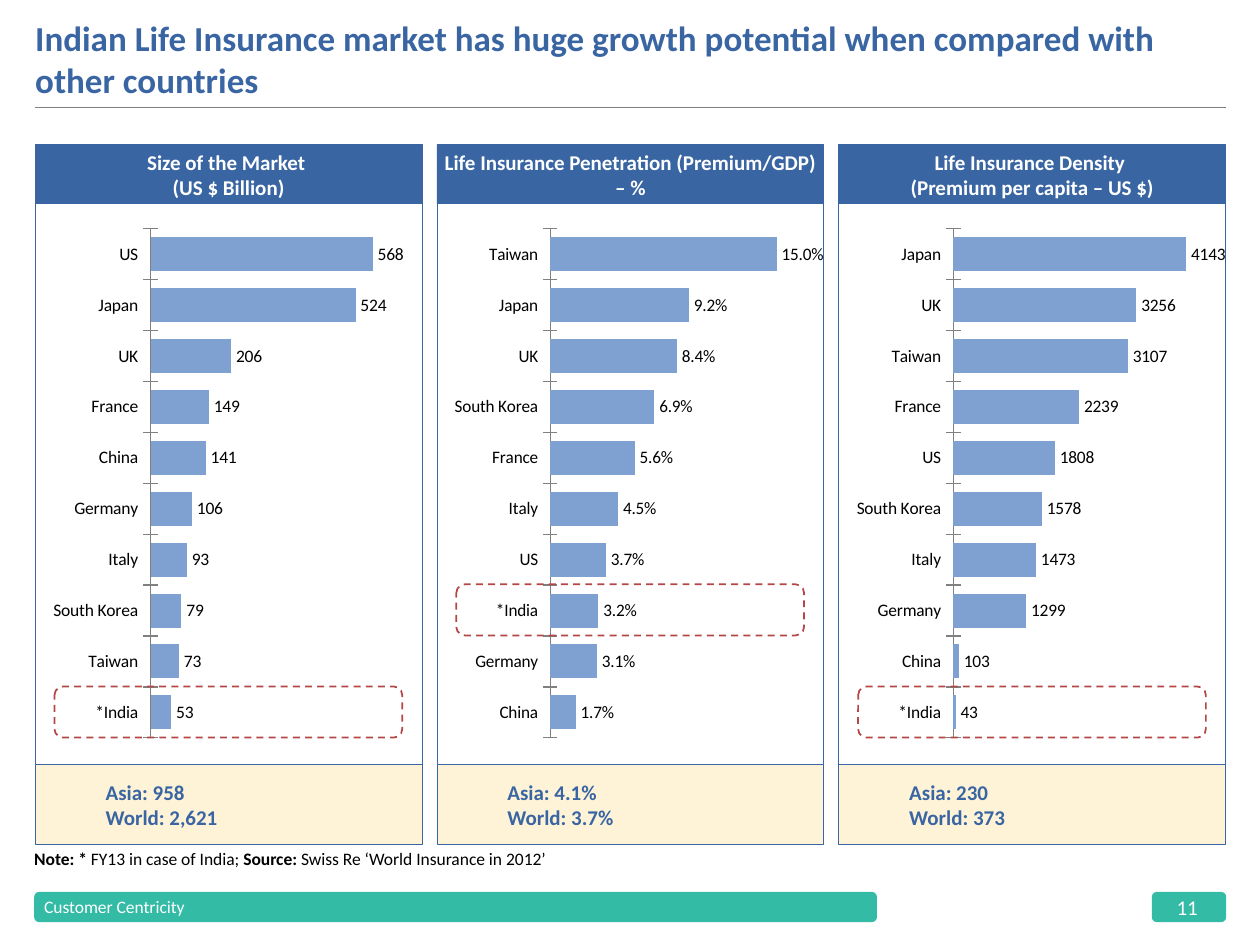
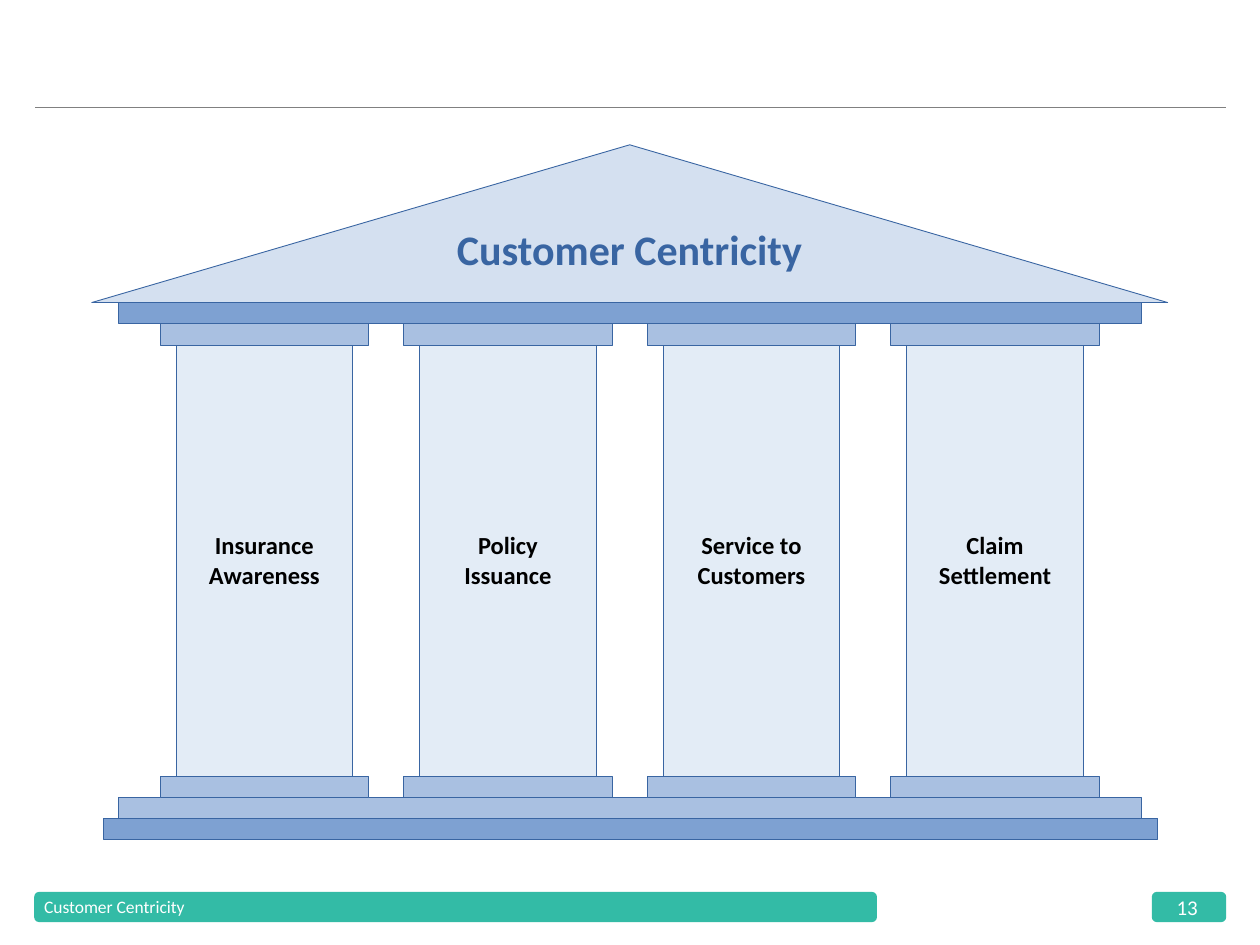
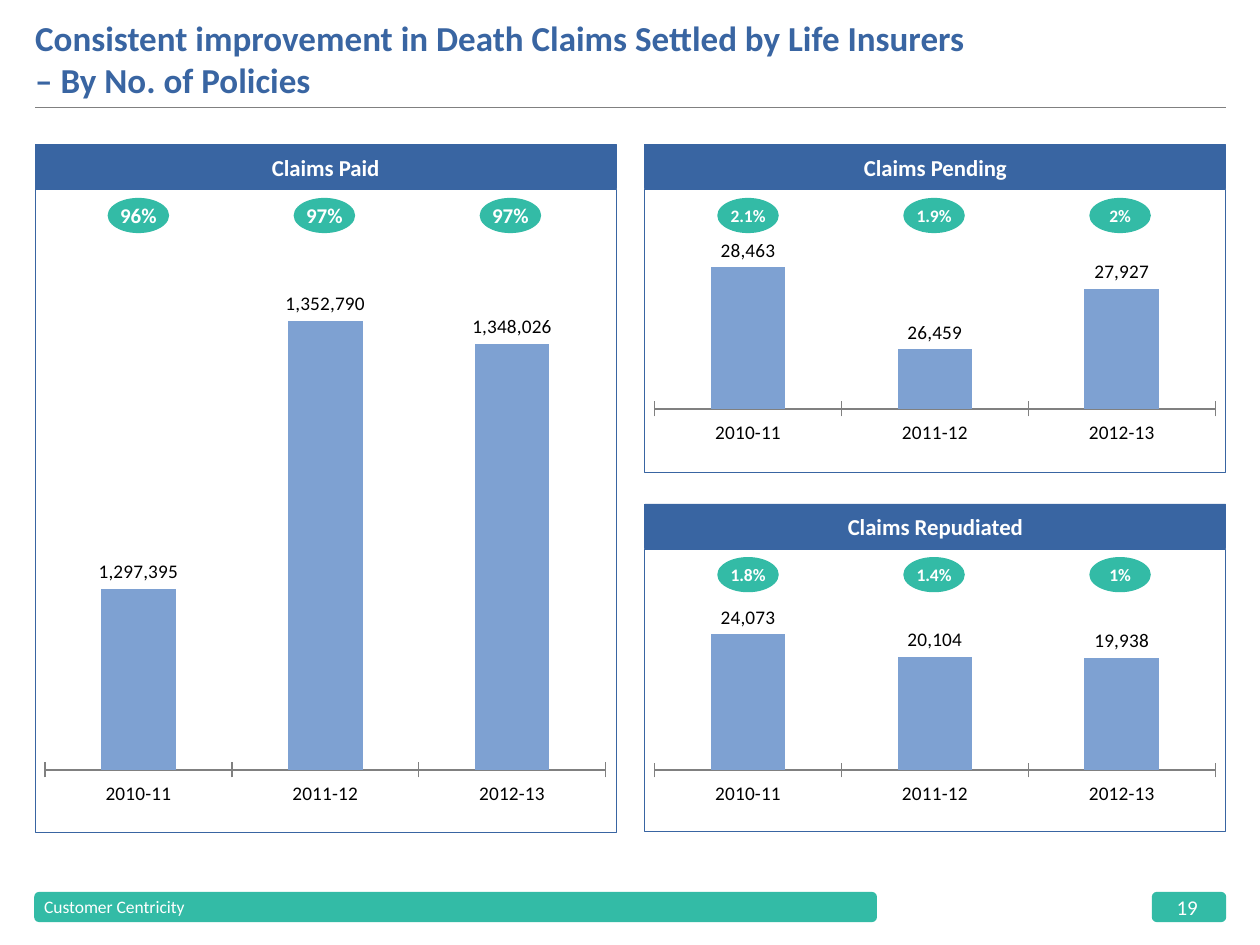
import copy
from dataclasses import dataclass

import pptx
import pptx.chart.data
import pptx.dml.color
import pptx.enum.chart
import pptx.enum.dml
import pptx.enum.shapes
import pptx.enum.text
import pptx.oxml
import pptx.oxml.ns
import pptx.util
from pptx.util import Cm

FONT = "Calibri"
BLUE, MID, SOFT, PALE, ROOF = "3965A2", "7EA1D2", "A9C0E1", "E3ECF6", "D4E0F0"
TEAL, CREAM, RED, GREY = "33BBA6", "FEF3D7", "B44646", "808080"
WHITE, BLACK = "FFFFFF", "000000"
LEFT, TOP, WIDE = 0.71, 2.92, 24.0

KIND = pptx.enum.shapes.MSO_SHAPE
ALIGN = pptx.enum.text.PP_ALIGN
ANCHOR = pptx.enum.text.MSO_ANCHOR
CHART = pptx.enum.chart.XL_CHART_TYPE
Box = tuple[float, float, float, float]


@dataclass
class Market:
    head: str
    asia: str
    world: str
    data: dict[str, float]
    width: float
    top: float
    fmt: str = "General"


@dataclass
class Claim:
    head: str
    x: float
    y: float
    high: float
    vals: tuple[int, ...]
    rates: tuple[str, ...]
    size: int
    span: tuple[float, float]
    plot: Box


@dataclass
class Slab:
    box: Box
    fill: str
    kind: int = KIND.FLOWCHART_PROCESS


MARKETS = [
    Market("Size of the Market \n(US $ Billion)", "958", "2,621",
           {"*India": 53, "Taiwan": 73, "South Korea": 79, "Italy": 93, "Germany": 106,
            "China": 141, "France": 149, "UK": 206, "Japan": 524, "US": 568},
           0.607, 600),
    Market("Life Insurance Penetration (Premium/GDP) – %", "4.1%", "3.7%",
           {"China": 1.7, "Germany": 3.1, "*India": 3.2, "US": 3.7, "Italy": 4.5,
            "France": 5.6, "South Korea": 6.9, "UK": 8.4, "Japan": 9.2, "Taiwan": 15},
           0.665, 16.7, r"0.0\%"),
    Market("Life Insurance Density \n(Premium per capita – US $)", "230", "373",
           {"*India": 43, "China": 103, "Germany": 1299, "Italy": 1473, "South Korea": 1578,
            "US": 1808, "France": 2239, "Taiwan": 3107, "UK": 3256, "Japan": 4143},
           0.674, 4600),
]

YEARS = ("2010-11", "2011-12", "2012-13")
CLAIMS = [
    Claim("Claims Pending", 13.0, TOP, 5.69, (28463, 26459, 27927),
          ("2.1%", "1.9%", "2%"), 10, (25000, 29000), (0.017, 0.196, 0.965, 0.58)),
    Claim("Claims Repudiated", 13.0, 10.16, 5.69, (24073, 20104, 19938),
          ("1.8%", "1.4%", "1%"), 10, (0, 30000), (0.017, 0.184, 0.965, 0.599)),
    Claim("Claims Paid", LEFT, TOP, 12.95, (1297395, 1352790, 1348026),
          ("96%", "97%", "97%"), 12, (1260000, 1360000), (0.017, 0.15, 0.965, 0.753)),
]

TEMPLE = [
    Slab((2.39, 16.08, 20.62, 0.43), SOFT),
    Slab((2.08, 16.49, 21.26, 0.43), MID),
    Slab((2.39, 6.1, 20.62, 0.43), MID),
    Slab((1.85, TOP, 21.69, 3.18), ROOF, KIND.ISOSCELES_TRIANGLE),
]
PILLARS = ["Insurance Awareness", "Policy Issuance", "Service to Customers", "Claim Settlement"]


def paint(target, tint: str) -> None:
    """Give a fill a solid colour."""
    target.solid()
    target.fore_color.rgb = pptx.dml.color.RGBColor.from_string(tint)


def style(font, size: float, tint: str, bold: bool = False) -> None:
    font.name, font.size, font.bold = FONT, pptx.util.Pt(size), bold
    font.color.rgb = pptx.dml.color.RGBColor.from_string(tint)


def write(shape, *rows, size=12, tint=WHITE, bold=False, align=ALIGN.LEFT,
          anchor=ANCHOR.MIDDLE, inset=0.0, wrap=True, indent=0.0) -> None:
    """Fill a shape with paragraphs; a row is text or a list of (text, bold)."""
    frame = shape.text_frame
    frame.auto_size = pptx.enum.text.MSO_AUTO_SIZE.NONE
    frame.word_wrap, frame.vertical_anchor = wrap, anchor
    frame.margin_left = frame.margin_right = Cm(inset)
    frame.margin_top = frame.margin_bottom = Cm(inset)
    for i, row in enumerate(rows):
        para = frame.add_paragraph() if i else frame.paragraphs[0]
        para.alignment = align
        if indent:
            para.level = 1
            para._p.get_or_add_pPr().set("marL", str(Cm(indent)))
        if isinstance(row, str):
            para.text = row
            for run in para.runs:
                style(run.font, size, tint, bold)
        else:
            for text, heavy in row:
                run = para.add_run()
                run.text = text
                style(run.font, size, tint, heavy)
        for mark in para._p.findall(pptx.oxml.ns.qn("a:br")):
            mark.insert(0, copy.deepcopy(para.runs[0]._r.rPr))


def place(box: Box) -> list[int]:
    return [Cm(n) for n in box]


def label(slide, box: Box, *rows, **form) -> None:
    write(slide.shapes.add_textbox(*place(box)), *rows, **form)


def draw(slide, box: Box, fill: str | None = None, line: str | None = None,
         kind: int = KIND.RECTANGLE, width: float = 0.5):
    shape = slide.shapes.add_shape(kind, *place(box))
    shape.shadow.inherit = False
    if fill:
        paint(shape.fill, fill)
    else:
        shape.fill.background()
    if line:
        paint(shape.line.fill, line)
        shape.line.width = pptx.util.Pt(width)
    else:
        shape.line.fill.background()
    return shape


def head(slide, box: Box, text: str, size: int) -> None:
    bar = draw(slide, box, BLUE, BLUE)
    write(bar, text, size=size, bold=True, align=ALIGN.CENTER, inset=0.15)


def graph(slide, kind, box: Box, cats, vals, plot: Box, span, fmt: str, size: int, gap: int) -> None:
    """Add a one-series bar or column chart with a fixed plot area."""
    data = pptx.chart.data.CategoryChartData()
    data.categories = cats
    data.add_series("Series 1", vals)
    chart = slide.shapes.add_chart(kind, *place(box), data).chart
    chart.has_title = chart.has_legend = False
    style(chart.font, size, BLACK)

    axis = chart.category_axis
    axis.major_tick_mark = pptx.enum.chart.XL_TICK_MARK.CROSS
    axis.has_major_gridlines = False
    paint(axis.format.line.fill, GREY)
    scale = chart.value_axis
    scale.minimum_scale, scale.maximum_scale = span
    scale.has_major_gridlines = False
    scale.major_tick_mark = pptx.enum.chart.XL_TICK_MARK.NONE
    scale.tick_label_position = pptx.enum.chart.XL_TICK_LABEL_POSITION.NONE
    scale.format.line.fill.background()

    bars = chart.plots[0]
    bars.gap_width, bars.vary_by_categories = gap, False
    paint(bars.series[0].format.fill, MID)
    bars.has_data_labels = True
    tags = bars.data_labels
    tags.show_value = True
    tags.number_format, tags.number_format_is_linked = fmt, False
    tags.position = pptx.enum.chart.XL_LABEL_POSITION.OUTSIDE_END
    style(tags.font, size, BLACK)

    area = chart._chartSpace.chart.plotArea
    for old in area.findall(pptx.oxml.ns.qn("c:layout")):
        area.remove(old)
    parts = "".join(f'<c:{name} val="{n}"/>' for name, n in zip("xywh", plot))
    area.insert(0, pptx.oxml.parse_xml(
        f'<c:layout {pptx.oxml.ns.nsdecls("c")}><c:manualLayout><c:layoutTarget val="inner"/>'
        f'<c:xMode val="edge"/><c:yMode val="edge"/>{parts}</c:manualLayout></c:layout>'))


def start(deck, number: int, title: str | None = None):
    """Add a slide with its rule, footer, page number and optional title."""
    slide = deck.slides.add_slide(deck.slide_layouts[5 if title else 6])
    for x, wide in ((0.69, 16.99), (23.22, 1.5)):
        draw(slide, (x, 17.98, wide, 0.61), TEAL, kind=KIND.ROUNDED_RECTANGLE)
    label(slide, (23.72, 18.03, 0.51, 0.51), str(number))
    label(slide, (0.89, 18.03, 8, 0.51), "Customer Centricity", size=10)
    rule = slide.shapes.add_connector(pptx.enum.shapes.MSO_CONNECTOR.STRAIGHT,
                                      *place((LEFT, 2.16, LEFT + WIDE, 2.16)))
    paint(rule.line.fill, GREY)
    rule.line.width = pptx.util.Pt(0.5)
    props = rule._element.spPr
    props.append(pptx.oxml.parse_xml(f'<a:effectLst {pptx.oxml.ns.nsdecls("a")}/>'))
    if title:
        name = slide.shapes.title
        name.left, name.top, name.width, name.height = place((LEFT, 0.23, WIDE, 1.8))
        write(name, title, size=20, tint=BLUE, bold=True, anchor=ANCHOR.BOTTOM)
    return slide


def markets(deck) -> None:
    slide = start(deck, 11, "Indian Life Insurance market has huge growth potential "
                            "when compared with other countries")
    wide, pitch, row = 7.8, 8.1, 1.03
    for i, item in enumerate(MARKETS):
        x = LEFT + i * pitch
        stat = draw(slide, (x, 15.42, wide, 1.6), CREAM, BLUE)
        write(stat, f"Asia: {item.asia}", f"World: {item.world}",
              tint=BLUE, bold=True, inset=0.15, indent=1.27)
        draw(slide, (x, 3.91, wide, 11.51), WHITE, BLUE)
        head(slide, (x, TOP, wide, 1.19), item.head, 12)
        graph(slide, CHART.BAR_CLUSTERED, (x, 4.24, wide, 11), list(item.data),
              list(item.data.values()), (0.298, 0.034, item.width, 0.933),
              (0, item.top), item.fmt, 10, 50)
        rank = list(item.data).index("*India")
        ring = draw(slide, (x + 0.39, 13.84 - rank * row, 7.01, row), line=RED,
                    kind=KIND.ROUNDED_RECTANGLE, width=1)
        ring.line.dash_style = pptx.enum.dml.MSO_LINE.DASH
    label(slide, (0.69, 17.09, WIDE, 0.43),
          [("Note: *", True), (" FY13 in case of India; ", False), ("Source: ", True),
           ("Swiss Re ‘World Insurance in 2012’", False)],
          size=10, tint=BLACK, anchor=ANCHOR.BOTTOM)


def temple(deck) -> None:
    slide = start(deck, 13)
    for slab in TEMPLE:
        draw(slide, slab.box, slab.fill, BLUE, slab.kind)
    form = dict(bold=True, align=ALIGN.CENTER, anchor=ANCHOR.TOP)
    label(slide, (8.69, 4.5, 8, 1.02), "Customer Centricity", size=24, tint=BLUE, **form)
    for i, text in enumerate(PILLARS):
        x = 3.23 + i * 4.91
        draw(slide, (x + 0.32, 6.96, 3.56, 8.69), PALE, BLUE, KIND.FLOWCHART_PROCESS)
        for y in (6.53, 15.65):
            draw(slide, (x, y, 4.2, 0.43), SOFT, BLUE, KIND.FLOWCHART_PROCESS)
        label(slide, (x + 0.59, 10.69, 3.02, 1.19), text, size=14, tint=BLACK, **form)


def claims(deck) -> None:
    slide = start(deck, 19, "Consistent improvement in Death Claims Settled by Life Insurers \n"
                            "– By No. of Policies")
    wide = 11.71
    for item in CLAIMS:
        body = (item.x, item.y + 0.91, wide, item.high)
        draw(slide, body, WHITE, BLUE)
        graph(slide, CHART.COLUMN_CLUSTERED, body, YEARS, item.vals, item.plot,
              item.span, "#,##0", 11, 150)
        head(slide, (item.x, item.y, wide, 0.89), item.head, 13)
        for i, rate in enumerate(item.rates):
            oval = draw(slide, (item.x + 1.46 + i * 3.75, item.y + 1.07, 1.24, 0.71),
                        TEAL, kind=KIND.OVAL)
            write(oval, rate, size=item.size, bold=True, align=ALIGN.CENTER,
                  inset=0.05, wrap=False)


def main() -> None:
    deck = pptx.Presentation()
    deck.slide_width, deck.slide_height = Cm(25.4), Cm(19.05)
    markets(deck)
    temple(deck)
    claims(deck)
    deck.save("out.pptx")


if __name__ == "__main__":
    main()
